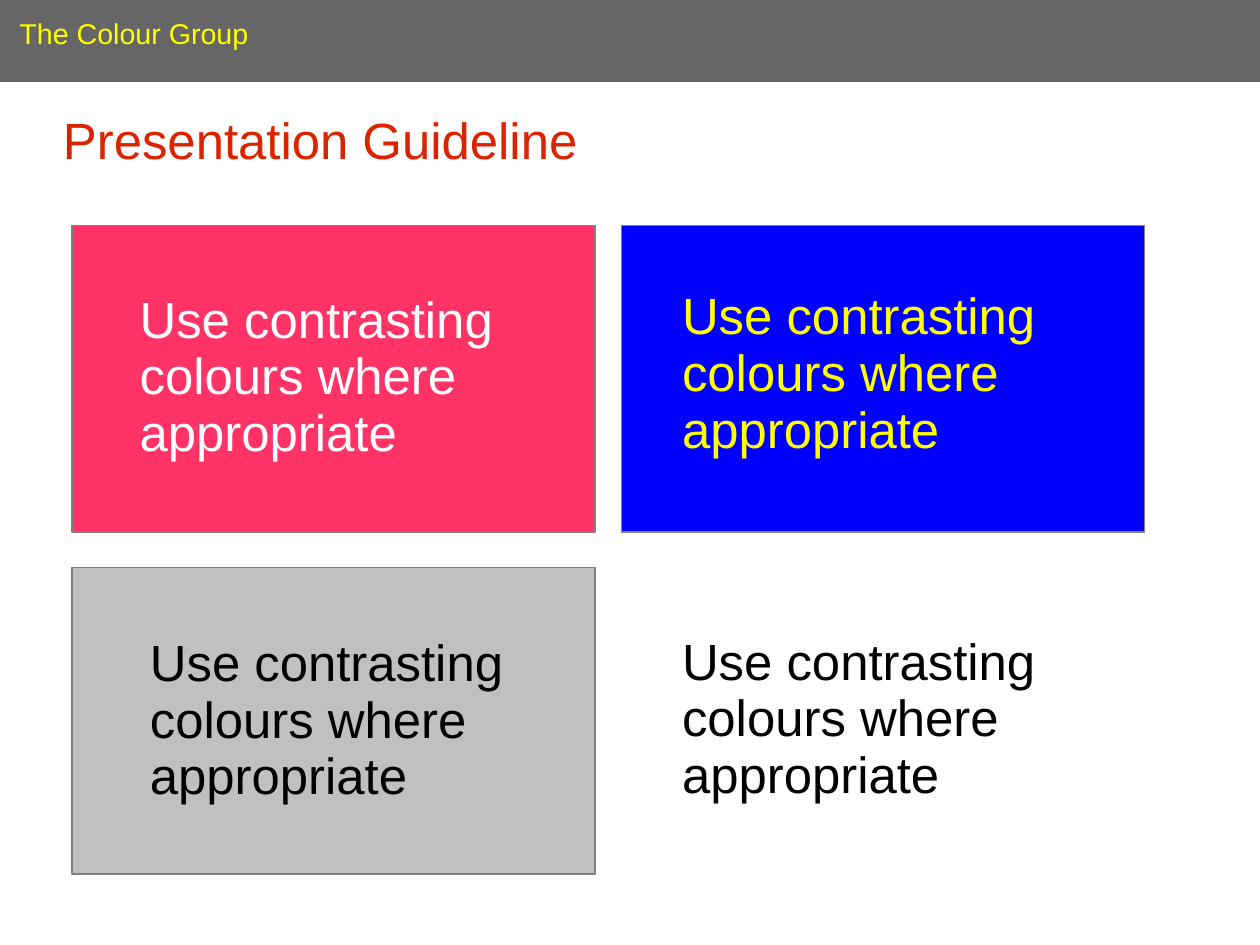
from pptx import Presentation
from pptx import util as u
from pptx.dml.color import RGBColor
from pptx.enum import shapes, text

WIDTH, HEIGHT = 11.01, 8.26
YELLOW = RGBColor(0xFF, 0xFF, 0x00)
RED = RGBColor(0xDC, 0x23, 0x00)
DARK_GREY = RGBColor(0x66, 0x66, 0x66)
EDGE_GREY = RGBColor(0x80, 0x80, 0x80)
PINK = RGBColor(0xFF, 0x33, 0x66)
BLUE = RGBColor(0x00, 0x00, 0xFF)
SILVER = RGBColor(0xC0, 0xC0, 0xC0)
WHITE = RGBColor(0xFF, 0xFF, 0xFF)
BLACK = RGBColor(0x00, 0x00, 0x00)

ADVICE = "Use contrasting colours where appropriate"
ADVICE_SIZE = (3.56, 1.56)
PANEL_SIZE = (4.57, 2.68)
COLUMN_STEP, ROW_STEP = 4.8, 2.99
# column, row, fill, text colour, text offset within the panel
PANELS = [
    (0, 0, PINK, WHITE, (0.54, 0.54)),
    (0, 1, SILVER, BLACK, (0.63, 0.55)),
    (1, 0, BLUE, YELLOW, (0.48, 0.51)),
    (1, 1, None, BLACK, (0.48, 0.54)),
]


def add_rectangle(page, box, fill, line):
    rectangle = page.shapes.add_shape(
        shapes.MSO_SHAPE.RECTANGLE, *map(u.Inches, box))
    rectangle.shadow.inherit = False
    rectangle.fill.solid()
    rectangle.fill.fore_color.rgb = fill
    rectangle.line.color.rgb = line
    rectangle.line.width = u.Pt(0.75)


def add_text(page, box, words, size, colour, inset=0.05, wrap=True,
             anchor=text.MSO_ANCHOR.TOP):
    frame = page.shapes.add_textbox(*map(u.Inches, box)).text_frame
    frame.word_wrap = wrap
    frame.vertical_anchor = anchor
    frame.margin_left = frame.margin_right = u.Inches(inset)
    frame.margin_top = frame.margin_bottom = u.Inches(inset)
    para = frame.paragraphs[0]
    para.text = words
    para.line_spacing = 0.93
    para.font.name = "Arial"
    para.font.size = u.Pt(size)
    para.font.color.rgb = colour


def add_header(page, box):
    left, top, _, _ = box
    add_rectangle(page, box, DARK_GREY, DARK_GREY)
    add_text(page, (left + 0.12, top + 0.12, 2.11, 0.38),
             "The Colour Group", 18, YELLOW, wrap=False)


def add_title(page, box):
    add_text(page, box, "Presentation Guideline", 32, RED, inset=0,
             anchor=text.MSO_ANCHOR.MIDDLE)


def add_panels(page, left, top):
    for column, row, fill, colour, (shift_x, shift_y) in PANELS:
        x, y = left + column * COLUMN_STEP, top + row * ROW_STEP
        if fill is not None:
            add_rectangle(page, (x, y, *PANEL_SIZE), fill, EDGE_GREY)
        add_text(page, (x + shift_x, y + shift_y, *ADVICE_SIZE),
                 ADVICE, 32, colour)


def main():
    deck = Presentation()
    deck.slide_width, deck.slide_height = u.Inches(WIDTH), u.Inches(HEIGHT)
    page = deck.slides.add_slide(deck.slide_layouts[6])
    add_header(page, (0, 0, WIDTH, 0.71))
    add_title(page, (0.55, 0.87, 7.09, 0.75))
    add_panels(page, 0.63, 1.97)
    deck.save("out.pptx")


if __name__ == "__main__":
    main()
